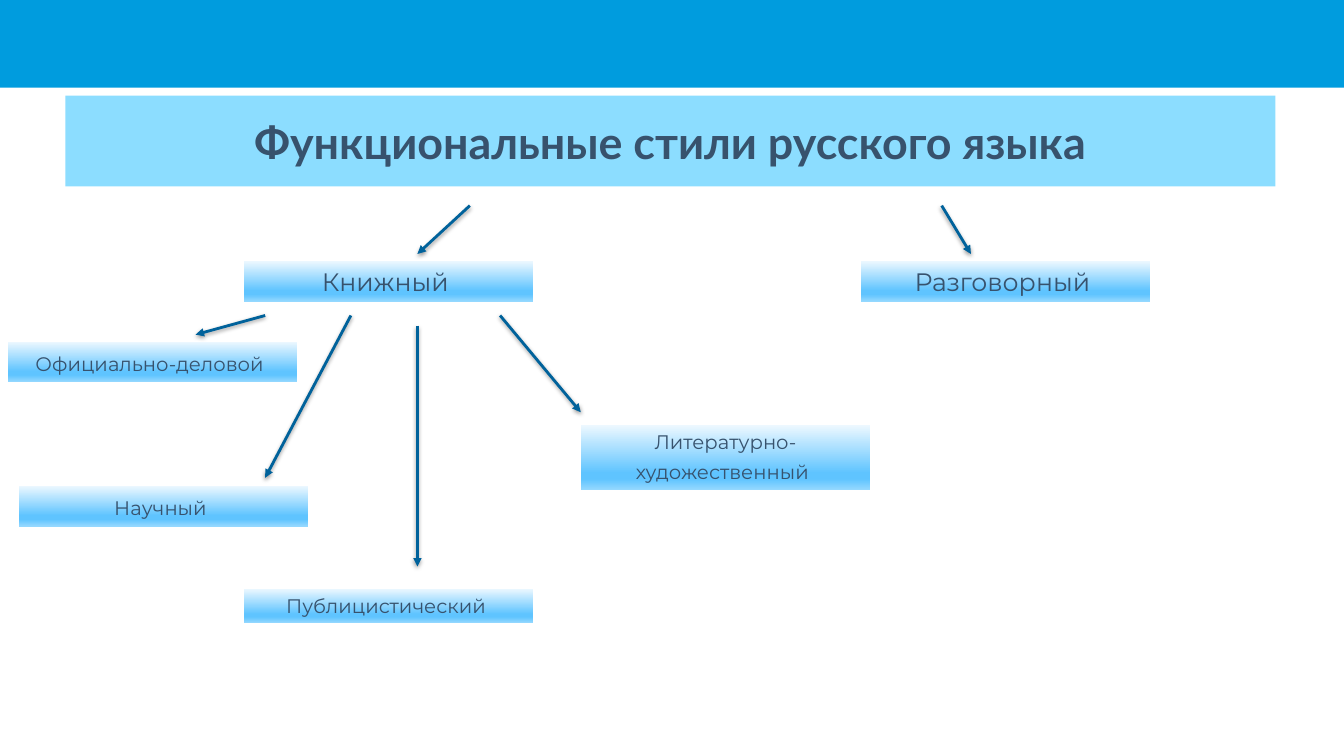
from lxml import etree
from pptx import Presentation
from pptx.dml.color import RGBColor
from pptx.enum import shapes, text
from pptx.oxml import parse_xml
from pptx.oxml.ns import nsdecls, qn
from pptx.util import Inches, Pt

BLUE = RGBColor(0x00, 0x9C, 0xDE)
LIGHT_BLUE = RGBColor(0x8C, 0xDD, 0xFF)
ARROW_BLUE = RGBColor(0x00, 0x62, 0x9B)
SLATE = RGBColor(0x37, 0x52, 0x6D)
GRADIENT = [
    (0, RGBColor(0xED, 0xF8, 0xFF)),
    (74, RGBColor(0x5F, 0xC4, 0xFF)),
    (83, RGBColor(0x5F, 0xC4, 0xFF)),
    (100, RGBColor(0x94, 0xD8, 0xFF)),
]
ARROW_SHADOW = (
    f'<a:effectLst {nsdecls("a")}>'
    f'<a:outerShdw blurRad="{Pt(3.1)}" dist="{Pt(1.6)}" dir="5400000" rotWithShape="0">'
    '<a:srgbClr val="000000"><a:alpha val="38000"/></a:srgbClr>'
    '</a:outerShdw></a:effectLst>'
)
BOX_WIDTH = 2.87

prs = Presentation()
prs.slide_width, prs.slide_height = Inches(13.33), Inches(7.5)
s = prs.slides.add_slide(prs.slide_layouts[6])


def add_box(left, top, width, height):
    sp = s.shapes.add_shape(shapes.MSO_SHAPE.RECTANGLE, Inches(left), Inches(top),
                            Inches(width), Inches(height))
    sp.shadow.inherit = False
    sp.line.fill.background()
    sp.text_frame.word_wrap = True
    sp.text_frame.paragraphs[0].alignment = text.PP_ALIGN.CENTER
    return sp


def add_run(p, words, size, font, color, bold=False):
    r = p.add_run()
    r.text = words
    r.font.size, r.font.name, r.font.bold = Pt(size), font, bold
    r.font.color.rgb = color


# Header band and title
band = add_box(0, 0, 13.33, 0.87)
band.fill.solid()
band.fill.fore_color.rgb = BLUE

title = add_box(0.65, 0.95, 12, 0.9)
title.fill.solid()
title.fill.fore_color.rgb = LIGHT_BLUE
title.text_frame.vertical_anchor = text.MSO_ANCHOR.MIDDLE
add_run(title.text_frame.paragraphs[0], "Функциональные стили русского языка",
        32, "Lato", SLATE, bold=True)

# Styles: left, top, height, name, size, font of the larger closing space
styles = [
    (8.54, 2.59, 0.4, "Разговорный ", 18, None),
    (2.42, 2.59, 0.4, "Книжный ", 18, None),
    (0.08, 3.39, 0.4, "Официально-деловой", 14, "Karla"),
    (0.19, 4.82, 0.4, "Научный", 14, "Montserrat"),
    (2.42, 5.84, 0.34, "Публицистический ", 14, None),
    (5.76, 4.22, 0.64, "Литературно-художественный", 14, "Karla"),
]
for left, top, height, name, size, space_font in styles:
    sp = add_box(left, top, BOX_WIDTH, height)
    sp.fill.gradient()
    sp.fill.gradient_angle = 270
    stops = sp._element.spPr.find(qn("a:gradFill")).find(qn("a:gsLst"))
    for stop in list(stops):
        stops.remove(stop)
    for position, color in GRADIENT:
        stop = etree.SubElement(stops, qn("a:gs"), pos=str(position * 1000))
        etree.SubElement(stop, qn("a:srgbClr"), val=str(color))
    tf = sp.text_frame
    tf.vertical_anchor = text.MSO_ANCHOR.TOP
    tf.auto_size = text.MSO_AUTO_SIZE.SHAPE_TO_FIT_TEXT
    add_run(tf.paragraphs[0], name, size, "Montserrat", SLATE)
    if space_font:
        add_run(tf.paragraphs[0], " ", 18, space_font, ARROW_BLUE)

# Arrows: start x, start y, end x, end y
arrows = [
    (4.66, 2.04, 4.14, 2.52),
    (9.34, 2.04, 9.63, 2.52),
    (2.63, 3.13, 1.94, 3.32),
    (3.48, 3.13, 2.63, 4.74),
    (4.14, 3.23, 4.14, 5.62),
    (4.96, 3.13, 5.76, 4.09),
]
for ends in arrows:
    arrow = s.shapes.add_connector(shapes.MSO_CONNECTOR.STRAIGHT, *map(Inches, ends))
    arrow.line.color.rgb = ARROW_BLUE
    arrow.line.width = Pt(2)
    etree.SubElement(arrow.line._get_or_add_ln(), qn("a:tailEnd"), type="triangle")
    arrow._element.spPr.append(parse_xml(ARROW_SHADOW))

prs.save("out.pptx")
